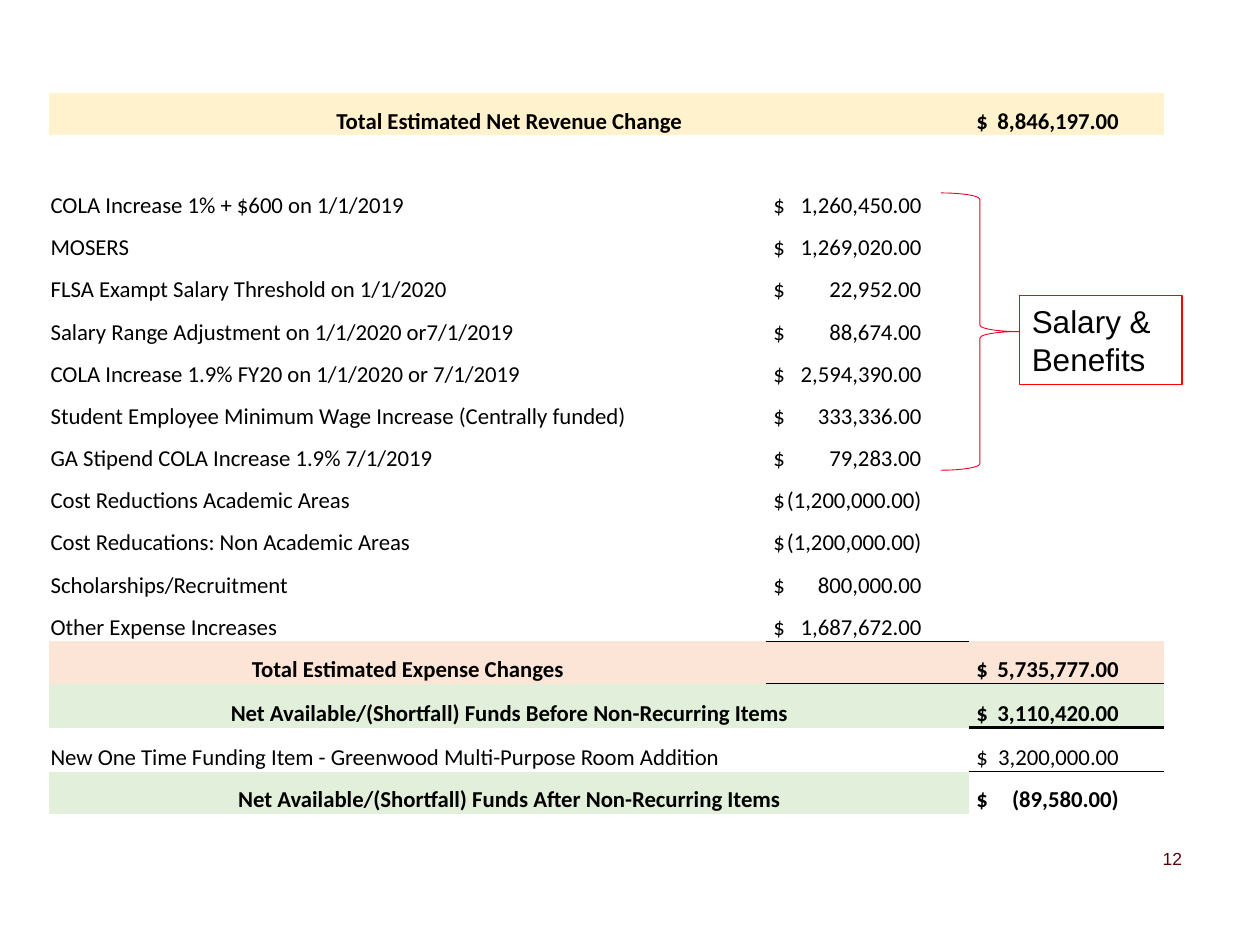
from pptx import Presentation
from pptx.dml.color import RGBColor
from pptx.enum.shapes import MSO_SHAPE
from pptx.enum.text import MSO_ANCHOR, MSO_AUTO_SIZE, PP_ALIGN
from pptx.oxml import parse_xml
from pptx.oxml.ns import nsdecls
from pptx.util import Cm, Pt

BLACK = RGBColor(0x00, 0x00, 0x00)
CREAM = RGBColor(0xFF, 0xF2, 0xCC)
PEACH = RGBColor(0xFC, 0xE4, 0xD6)
GREEN = RGBColor(0xE2, 0xEF, 0xDA)
RED = RGBColor(0xFF, 0x00, 0x00)
ROSE = RGBColor(0xEB, 0x00, 0x2B)
WINE = RGBColor(0x5E, 0x00, 0x09)

COSTS = [
    ("COLA Increase 1% + $600 on 1/1/2019", "1,260,450.00"),
    ("MOSERS", "1,269,020.00"),
    ("FLSA Exampt Salary Threshold on 1/1/2020", "22,952.00"),
    ("Salary Range Adjustment on 1/1/2020 or7/1/2019", "88,674.00"),
    ("COLA Increase 1.9% FY20 on 1/1/2020 or 7/1/2019", "2,594,390.00"),
    ("Student Employee Minimum Wage Increase (Centrally funded)", "333,336.00"),
    ("GA Stipend COLA Increase 1.9% 7/1/2019", "79,283.00"),
    ("Cost Reductions Academic Areas", "(1,200,000.00)"),
    ("Cost Reducations: Non Academic Areas", "(1,200,000.00)"),
    ("Scholarships/Recruitment", "800,000.00"),
    ("Other Expense Increases", "1,687,672.00"),
]
# row: label, amount, bold, fills of the three columns
TOTALS = {
    0: ("Total Estimated Net Revenue Change", "8,846,197.00", True, [CREAM] * 3),
    13: ("Total Estimated Expense Changes", "5,735,777.00", True, [PEACH] * 3),
    14: ("Net Available/(Shortfall) Funds Before Non-Recurring Items",
         "3,110,420.00", True, [GREEN] * 3),
    15: ("New One Time Funding Item - Greenwood Multi-Purpose Room Addition",
         "3,200,000.00", False, [None] * 3),
    16: ("Net Available/(Shortfall) Funds After Non-Recurring Items",
         "(89,580.00)", True, [GREEN, GREEN, None]),
}
MERGES = [(0, 0, 0, 1), (1, 0, 1, 2), (2, 2, 12, 2),
          (14, 0, 14, 1), (15, 0, 15, 1), (16, 0, 16, 1)]
RULES = [(12, 1, 0.5), (13, 2, 0.5), (14, 2, 2), (15, 2, 0.5)]  # row above, column, points

WIDTHS = [14.45, 4.09, 3.94]
HEIGHTS = [0.89 if row in (14, 15) else 0.85 for row in range(17)]
STOPS = {1: 2.98, 2: 2.87}
INSET = 0.03
PLAIN = "{2D5ABB26-0587-4C30-8999-92F81FD0307C}"

CELL = {"margin_left": Cm(INSET), "margin_right": Cm(INSET), "margin_top": Cm(INSET),
        "margin_bottom": 0, "vertical_anchor": MSO_ANCHOR.BOTTOM}
FLAT = {"margin_left": 0, "margin_right": 0, "margin_top": 0, "margin_bottom": 0,
        "vertical_anchor": MSO_ANCHOR.MIDDLE, "word_wrap": True}


def apply(item, values):
    for name, value in values.items():
        setattr(item, name, value)


def write(para, text, color=BLACK, **font):
    run = para.add_run()
    run.text = text
    run.font.color.rgb = color
    apply(run.font, font)


def add_sum(cell, col, amount, bold):
    """Put the dollar sign at the left and the amount at a right tab."""
    cell.margin_left = Cm(0.15)
    para = cell.text_frame.paragraphs[0]
    para._p.get_or_add_pPr().append(parse_xml(
        f'<a:tabLst {nsdecls("a")}><a:tab pos="{Cm(STOPS[col])}" algn="r"/></a:tabLst>'))
    write(para, "$\t" + amount, name="Calibri", size=Pt(13), bold=bold)


def add_rule(cell, side, width):
    line = parse_xml(
        f'<a:{side} {nsdecls("a")} w="{Pt(width)}"><a:solidFill>'
        f'<a:srgbClr val="{BLACK}"/></a:solidFill></a:{side}>')
    cell._tc.get_or_add_tcPr().insert(0, line)


def add_grid(slide):
    frame = slide.shapes.add_table(len(HEIGHTS), len(WIDTHS), Cm(0.99), Cm(1.88),
                                   Cm(sum(WIDTHS)), Cm(sum(HEIGHTS)))
    grid = frame.table
    apply(grid, {"first_row": False, "horz_banding": False})
    grid._tbl.tblPr.find("{*}tableStyleId").text = PLAIN
    for col, width in zip(grid.columns, WIDTHS):
        col.width = Cm(width)
    for row, height in zip(grid.rows, HEIGHTS):
        row.height = Cm(height)
    for cell in grid.iter_cells():
        apply(cell, CELL)
        cell.fill.background()
    for top, left, bottom, right in MERGES:
        grid.cell(top, left).merge(grid.cell(bottom, right))

    lines = [(row, 1, label, amount, False, [None] * 3)
             for row, (label, amount) in enumerate(COSTS, 2)]
    lines += [(row, 2, *total) for row, total in TOTALS.items()]
    for row, col, label, amount, bold, fills in lines:
        para = grid.cell(row, 0).text_frame.paragraphs[0]
        para.alignment = PP_ALIGN.CENTER if bold else PP_ALIGN.LEFT
        write(para, label, name="Calibri", size=Pt(13), bold=bold)
        add_sum(grid.cell(row, col), col, amount, bold)
        for place, color in enumerate(fills):
            if color is not None:
                fill = grid.cell(row, place).fill
                fill.solid()
                fill.fore_color.rgb = color
    for row, col, width in RULES:
        add_rule(grid.cell(row, col), "lnB", width)
    for row, col, width in RULES:
        add_rule(grid.cell(row + 1, col), "lnT", width)


def add_brace(slide):
    brace = slide.shapes.add_shape(MSO_SHAPE.RIGHT_BRACE, Cm(18.97), Cm(3.89),
                                   Cm(1.57), Cm(5.59))
    brace.shadow.inherit = False
    brace.fill.background()
    brace.line.color.rgb = ROSE
    brace.line.width = Pt(0.5)


def add_label(slide):
    box = slide.shapes.add_textbox(Cm(20.55), Cm(5.96), Cm(3.28), Cm(1.8))
    box.line.color.rgb = RED
    box.line.width = Pt(0.75)
    apply(box.text_frame, {"word_wrap": True,
                           "auto_size": MSO_AUTO_SIZE.SHAPE_TO_FIT_TEXT})
    write(box.text_frame.paragraphs[0], "Salary & Benefits", name="Arial", size=Pt(18))


def add_number(slide):
    box = slide.shapes.add_textbox(Cm(22.56), Cm(16.85), Cm(1.27), Cm(0.93))
    apply(box.text_frame, FLAT)
    para = box.text_frame.paragraphs[0]
    para.alignment = PP_ALIGN.RIGHT
    write(para, "12", WINE, name="Arial", size=Pt(10))


def main():
    deck = Presentation()
    apply(deck, {"slide_width": Cm(25.4), "slide_height": Cm(19.05)})
    slide = deck.slides.add_slide(deck.slide_layouts[6])
    for add in (add_number, add_grid, add_brace, add_label):
        add(slide)
    deck.save("out.pptx")


if __name__ == "__main__":
    main()
